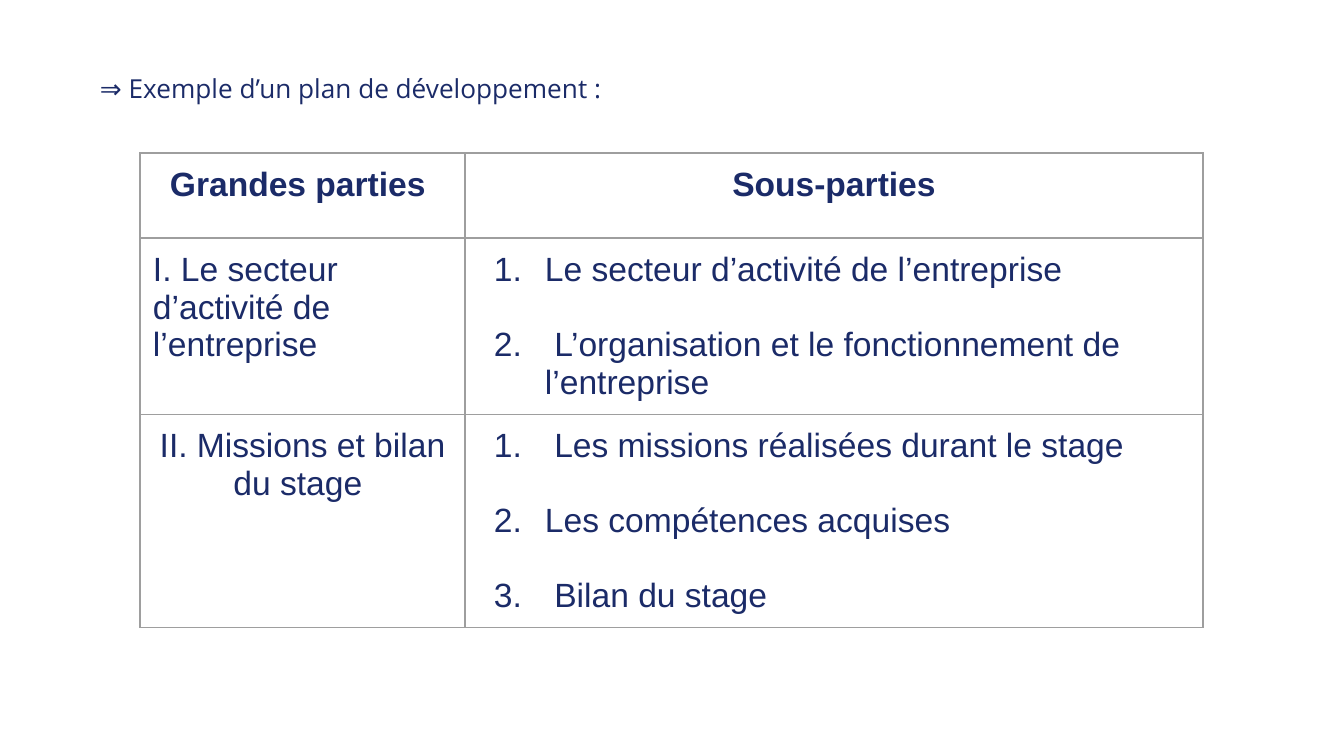
from dataclasses import dataclass

from lxml import etree
from pptx import Presentation
from pptx.dml.color import RGBColor
from pptx.enum.text import MSO_ANCHOR, PP_ALIGN
from pptx.oxml.ns import qn
from pptx.util import Emu, Pt

LEFT, CENTER = PP_ALIGN.LEFT, PP_ALIGN.CENTER
TOP = MSO_ANCHOR.TOP
EMU_PER_PX = 914400 / 134.4
BLANK_LAYOUT = 6


@dataclass(frozen=True)
class Theme:
    navy: str = "1B2B68"
    border: str = "9E9E9E"
    border_width: float = 0.75
    intro_font: str = "Open Sans"
    table_font: str = "Arial"
    intro_size: int = 14
    table_size: int = 18
    item_gap: int = 20


THEME = Theme()

HEADERS = ["Grandes parties ", "Sous-parties"]
PARTS = [
    ("I. Le secteur d’activité de l’entreprise", LEFT, [
        "Le secteur d’activité de l’entreprise",
        " L’organisation et le fonctionnement de l’entreprise",
    ]),
    ("II. Missions et bilan du stage ", CENTER, [
        " Les missions réalisées durant le stage",
        "Les compétences acquises",
        " Bilan du stage",
    ]),
]


def px(length):
    return Emu(round(length * EMU_PER_PX))


def style_font(paragraph, name, size, bold=False):
    font = paragraph.font
    font.name, font.size, font.bold = name, Pt(size), bold
    font.color.rgb = RGBColor.from_string(THEME.navy)


def add_color(parent, color):
    etree.SubElement(parent, qn("a:srgbClr"), val=color)


def number_paragraph(paragraph):
    properties = paragraph._p.get_or_add_pPr()
    properties.set("marL", str(px(67)))
    properties.set("indent", str(px(-51)))
    add_color(etree.SubElement(properties, qn("a:buClr")), THEME.navy)
    etree.SubElement(properties, qn("a:buFont"), typeface=THEME.table_font)
    etree.SubElement(properties, qn("a:buAutoNum"), type="arabicPeriod")


def format_cell(cell):
    cell.margin_left = cell.margin_right = px(13)
    cell.margin_top = cell.margin_bottom = px(13)
    cell.vertical_anchor = TOP
    properties = cell._tc.get_or_add_tcPr()
    for side in ("lnL", "lnR", "lnT", "lnB"):
        line = etree.SubElement(properties, qn(f"a:{side}"), w=str(Pt(THEME.border_width)))
        add_color(etree.SubElement(line, qn("a:solidFill")), THEME.border)
    cell.fill.background()


def fill_cell(cell, texts, align=LEFT, bold=False, numbered=False):
    format_cell(cell)
    frame = cell.text_frame
    for index, text in enumerate(texts):
        paragraph = frame.add_paragraph() if index else frame.paragraphs[0]
        paragraph.add_run().text = text
        paragraph.alignment = align
        if index:
            paragraph.space_before = Pt(THEME.item_gap)
        if numbered:
            number_paragraph(paragraph)
        style_font(paragraph, THEME.table_font, THEME.table_size, bold)


def add_intro(slide, left, top, width, height):
    frame = slide.shapes.add_textbox(px(left), px(top), px(width), px(height)).text_frame
    frame.word_wrap = True
    frame.vertical_anchor = TOP
    frame.margin_left = frame.margin_right = px(13)
    frame.margin_top, frame.margin_bottom = px(50), 0
    paragraph = frame.paragraphs[0]
    paragraph.add_run().text = "⇒ Exemple d’un plan de développement :"
    style_font(paragraph, THEME.intro_font, THEME.intro_size)


def add_plan_table(slide, left, top, column_widths, header_height, row_height):
    heights = [header_height] + [row_height] * len(PARTS)
    table = slide.shapes.add_table(
        len(heights), len(column_widths), px(left), px(top),
        px(sum(column_widths)), px(sum(heights))).table
    table.first_row = table.horz_banding = False
    for column, width in zip(table.columns, column_widths):
        column.width = px(width)
    for row, height in zip(table.rows, heights):
        row.height = px(height)

    # Header row
    for index, header in enumerate(HEADERS):
        fill_cell(table.cell(0, index), [header], CENTER, bold=True)
    # One row per main part, with its numbered subparts
    for index, (part, align, subparts) in enumerate(PARTS, start=1):
        fill_cell(table.cell(index, 0), [part], align)
        fill_cell(table.cell(index, 1), subparts, numbered=True)


def main():
    presentation = Presentation()
    presentation.slide_width, presentation.slide_height = px(1344), px(756)
    slide = presentation.slides.add_slide(presentation.slide_layouts[BLANK_LAYOUT])
    add_plan_table(slide, 140, 153, [325, 738], header_height=85, row_height=113)
    add_intro(slide, 87, 32, 1202, 83)
    presentation.save("out.pptx")


if __name__ == "__main__":
    main()
